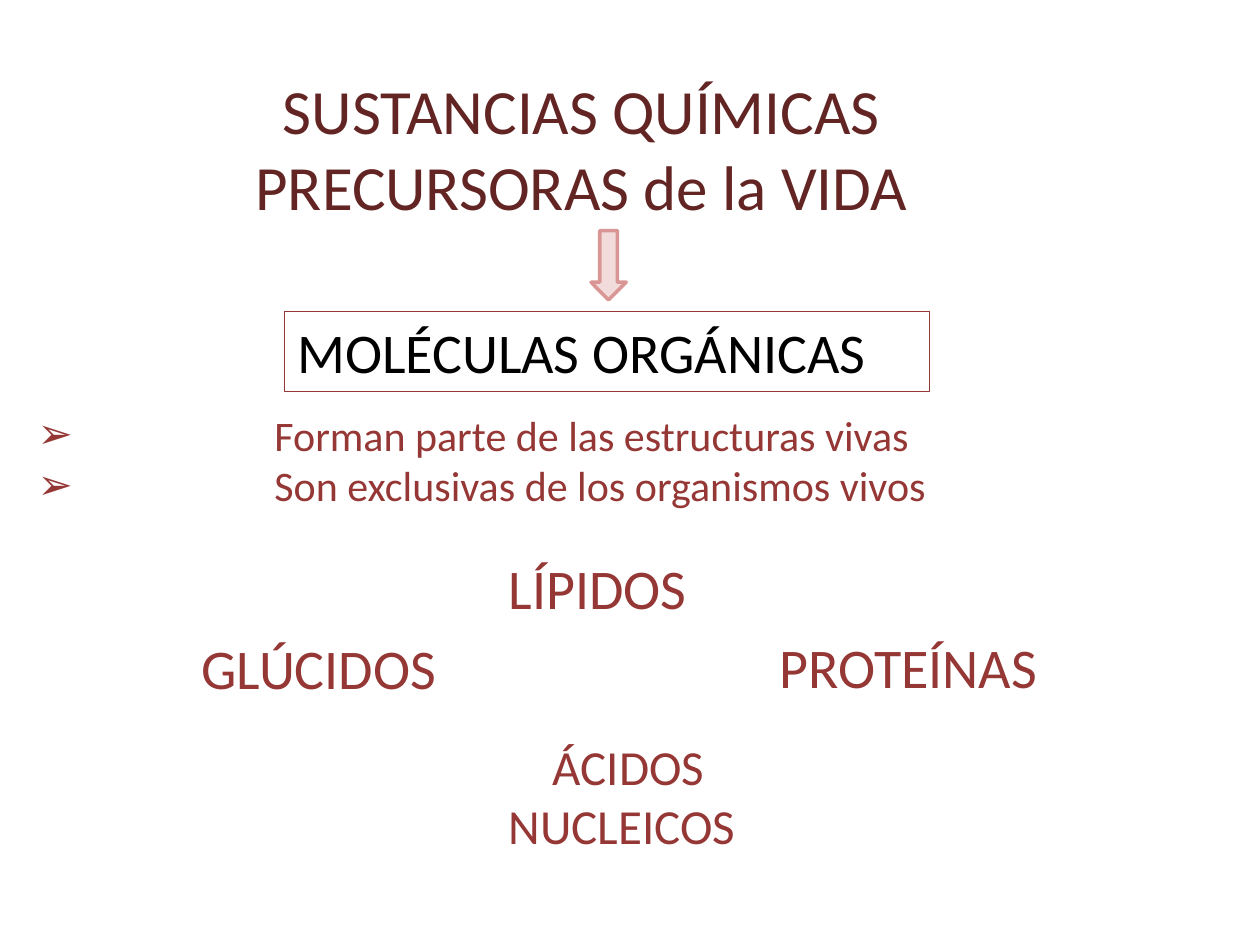
from pptx import Presentation
from pptx.dml.color import RGBColor
from pptx.enum.shapes import MSO_SHAPE
from pptx.enum.text import MSO_ANCHOR, MSO_AUTO_SIZE, PP_ALIGN
from pptx.util import Inches, Pt
from lxml import etree

DOWN_ARROW = MSO_SHAPE.DOWN_ARROW
TOP = MSO_ANCHOR.TOP
NO_AUTOFIT = MSO_AUTO_SIZE.NONE
CENTER = PP_ALIGN.CENTER

DARK_RED = RGBColor(0x63, 0x25, 0x23)
RED = RGBColor(0x95, 0x37, 0x35)
PINK = RGBColor(0xD9, 0x96, 0x94)
PALE_PINK = RGBColor(0xF2, 0xDC, 0xDB)
BLACK = RGBColor(0, 0, 0)
FONT = "Calibri"
DRAWING = "{http://schemas.openxmlformats.org/drawingml/2006/main}"


def add_run(paragraph, text, size, color):
    run = paragraph.add_run()
    run.text = text
    run.font.name = FONT
    run.font.size = Pt(size)
    run.font.color.rgb = color


def add_text_box(left, top, width, height):
    box = slide.shapes.add_textbox(Inches(left), Inches(top), Inches(width), Inches(height))
    box.text_frame.word_wrap = True
    return box


presentation = Presentation()
presentation.slide_width = Inches(10)
presentation.slide_height = Inches(7.5)
slide = presentation.slides.add_slide(presentation.slide_layouts[5])

# Title on two centred lines, set left of the middle of its box
title = slide.shapes.title
title.left, title.top = Inches(1.93), Inches(0.52)
title.width, title.height = Inches(6.06), Inches(1.31)
title_frame = title.text_frame
title_frame.auto_size = NO_AUTOFIT
title_frame.vertical_anchor = TOP
title_frame.margin_left = 0
title_frame.margin_right = Inches(0.69)
title_paragraph = title_frame.paragraphs[0]
title_paragraph.alignment = CENTER
add_run(title_paragraph, "SUSTANCIAS QUÍMICAS", 36, DARK_RED)
title_paragraph.add_line_break()
add_run(title_paragraph, "PRECURSORAS de la VIDA", 36, DARK_RED)

# Framed heading
heading = add_text_box(2.26, 2.47, 5.12, 0.64)
heading.line.color.rgb = RED
heading.line.width = Pt(0.75)
add_run(heading.text_frame.paragraphs[0], "MOLÉCULAS ORGÁNICAS", 32, BLACK)

# Families of molecules: text, left, top, height, size, first-line indent
families = [
    ("GLÚCIDOS", 1.5, 4.98, 0.64, 32, 0),
    ("PROTEÍNAS", 6.09, 4.97, 0.64, 32, 0),
    ("LÍPIDOS", 3.94, 4.34, 0.64, 32, 0),
    ("ÁCIDOS NUCLEICOS", 3.94, 5.8, 1.04, 28, 0.35),
]
for text, left, top, height, size, indent in families:
    paragraph = add_text_box(left, top, 2.44, height).text_frame.paragraphs[0]
    paragraph._p.get_or_add_pPr().set("indent", str(Inches(indent)))
    add_run(paragraph, text, size, RED)

# Arrow from title to heading
arrow = slide.shapes.add_shape(DOWN_ARROW, Inches(4.69), Inches(1.83), Inches(0.28), Inches(0.55))
arrow.shadow.inherit = False
arrow.fill.solid()
arrow.fill.fore_color.rgb = PALE_PINK
arrow.line.color.rgb = PINK
arrow.line.width = Pt(2)

# Bulleted properties with a wide hanging indent
properties_frame = add_text_box(0.2, 3.2, 9.13, 0.91).text_frame
properties = ["Forman parte de las estructuras vivas", "Son exclusivas de los organismos vivos"]
for index, text in enumerate(properties):
    paragraph = properties_frame.add_paragraph() if index else properties_frame.paragraphs[0]
    paragraph_properties = paragraph._p.get_or_add_pPr()
    paragraph_properties.set("marL", str(Inches(1.88)))
    paragraph_properties.set("indent", str(Inches(-1.88)))
    etree.SubElement(paragraph_properties, DRAWING + "buFont", typeface=FONT)
    etree.SubElement(paragraph_properties, DRAWING + "buChar", char="➢")
    add_run(paragraph, text, 24, RED)

presentation.save("out.pptx")
